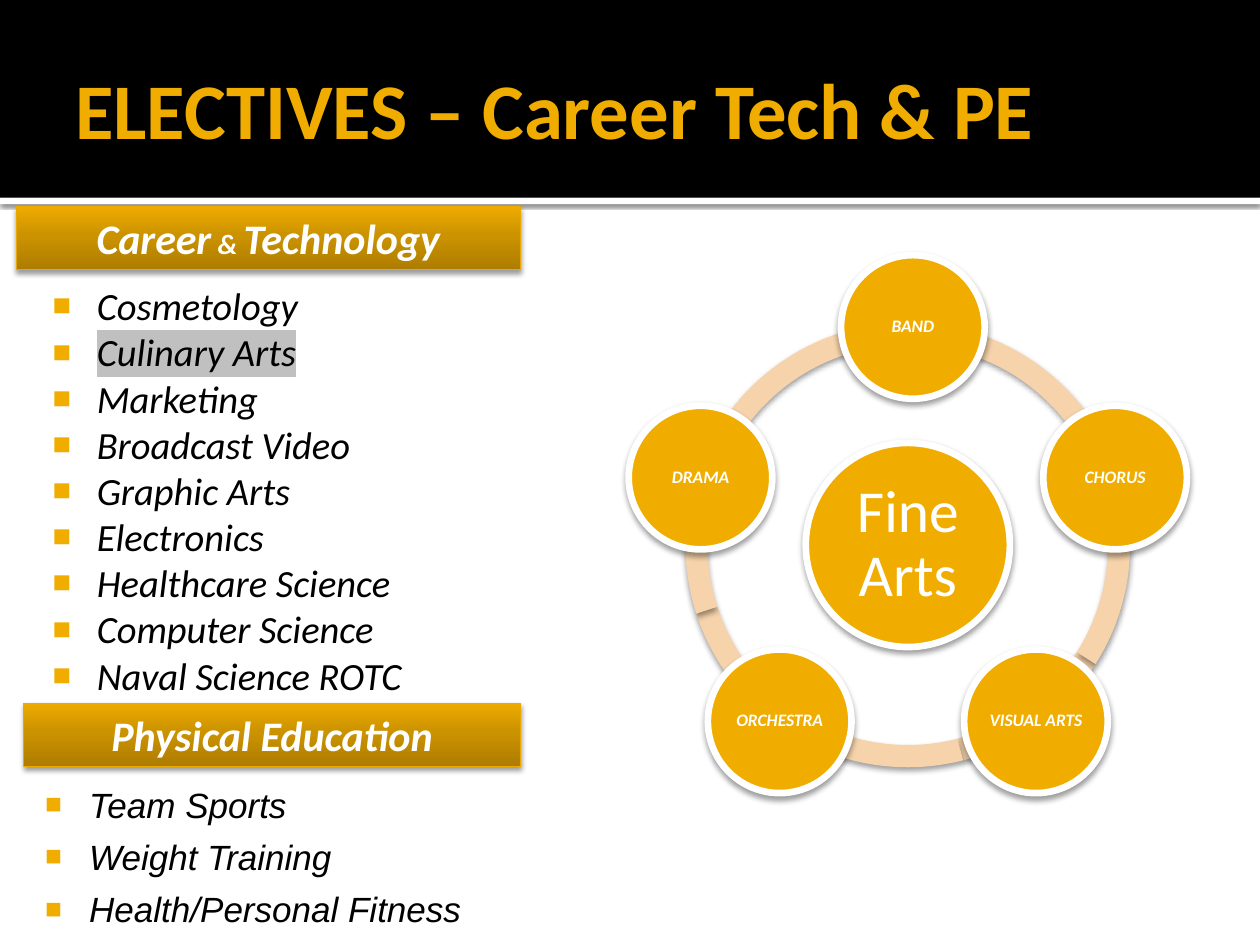
import math

from lxml import etree
from pptx import Presentation
from pptx.dml.color import RGBColor
from pptx.enum import shapes, text
from pptx.oxml import parse_xml
from pptx.oxml.ns import nsdecls, qn
from pptx.util import Inches, Pt

COLORS = {
    "black": "000000", "white": "FFFFFF", "gold": "F0AD00", "ring": "F6D3AB",
    "bar_line": "EBA900", "bar_dark": "AE7D00", "bar_mid": "CC9300",
    "bar_light": "EEAB00", "highlight": "C0C0C0",
}
SHAPE = shapes.MSO_SHAPE
CENTER = text.PP_ALIGN.CENTER
TOP, MIDDLE = text.MSO_ANCHOR.TOP, text.MSO_ANCHOR.MIDDLE


def rgb(name):
    return RGBColor.from_string(COLORS[name])


def add_shape(s, kind, box, fill, line=None, width=0, shadow=None):
    """shadow is (opacity %, blur pt, distance pt), cast straight down."""
    sp = s.shapes.add_shape(kind, *map(Inches, box))
    sp.shadow.inherit = False
    if fill:
        sp.fill.solid()
        sp.fill.fore_color.rgb = rgb(fill)
    if line:
        sp.line.color.rgb = rgb(line)
        sp.line.width = Pt(width)
    else:
        sp.line.fill.background()
    if shadow:
        alpha, blur, dist = shadow
        effects = sp._element.spPr.find(qn("a:effectLst"))
        effects.append(parse_xml(
            f'<a:outerShdw {nsdecls("a")} blurRad="{Pt(blur)}" dist="{Pt(dist)}" '
            f'dir="5400000" rotWithShape="0"><a:srgbClr val="{COLORS["black"]}">'
            f'<a:alpha val="{alpha * 1000}"/></a:srgbClr></a:outerShdw>'))
    return sp


def set_frame(tf, anchor, insets):
    tf.word_wrap = True
    tf.vertical_anchor = anchor
    (tf.margin_left, tf.margin_top,
     tf.margin_right, tf.margin_bottom) = map(Inches, insets)


def add_text_box(s, box, anchor, insets):
    tf = s.shapes.add_textbox(*map(Inches, box)).text_frame
    set_frame(tf, anchor, insets)
    return tf


def add_run(p, content, size, color, font="Calibri", bold=False, italic=False):
    r = p.add_run()
    r.text = content
    r.font.size, r.font.name = Pt(size), font
    r.font.bold, r.font.italic = bold, italic
    r.font.color.rgb = rgb(color)
    return r


def add_highlight(r):
    mark = parse_xml(f'<a:highlight {nsdecls("a")}>'
                     f'<a:srgbClr val="{COLORS["highlight"]}"/></a:highlight>')
    r.font._element.find(qn("a:solidFill")).addnext(mark)


def add_bullet(p):
    pPr = p._p.get_or_add_pPr()
    pPr.set("marL", str(Inches(0.48)))
    pPr.set("indent", str(Inches(-0.35)))
    color = etree.SubElement(pPr, qn("a:buClr"))
    etree.SubElement(color, qn("a:srgbClr"), val=COLORS["gold"])
    etree.SubElement(pPr, qn("a:buSzPct"), val="80000")
    etree.SubElement(pPr, qn("a:buFont"), typeface="Arial")
    etree.SubElement(pPr, qn("a:buChar"), char="■")


def header(s, x, y, w, h):
    # White rule under the black band
    add_shape(s, SHAPE.RECTANGLE, (x, y + h, w, 0.05), "white", shadow=(60, 2.5, 0.8))
    add_shape(s, SHAPE.RECTANGLE, (x, y, w, h), "black")
    tf = add_text_box(s, (x + 0.5, y + 0.17, w - 1, 1.37), MIDDLE,
                      (0.1, 0.05, 0.05, 0.05))
    add_run(tf.paragraphs[0], "ELECTIVES – Career Tech & PE", 45, "gold", bold=True)


def section_bar(s, box, runs):
    sp = add_shape(s, SHAPE.RECTANGLE, box, None, "bar_line", 0.5, (38, 3.1, 2))
    stops = "".join(
        f'<a:gs pos="{pos}000"><a:srgbClr val="{COLORS[name]}"/></a:gs>'
        for pos, name in ((0, "bar_dark"), (55, "bar_mid"), (100, "bar_light")))
    sp._element.spPr.find(qn("a:prstGeom")).addnext(parse_xml(
        f'<a:gradFill {nsdecls("a")}><a:gsLst>{stops}</a:gsLst>'
        '<a:lin ang="16200000" scaled="0"/></a:gradFill>'))
    set_frame(sp.text_frame, MIDDLE, (0.1, 0.05, 0.1, 0.05))
    p = sp.text_frame.paragraphs[0]
    p.alignment = CENTER
    for content, size in runs:
        add_run(p, content, size, "white", bold=True, italic=True)


def bullet_list(s, box, insets, items, size, font, spacing=1.0, before=0, marked=()):
    tf = add_text_box(s, box, TOP, insets)
    for i, item in enumerate(items):
        p = tf.add_paragraph() if i else tf.paragraphs[0]
        p.line_spacing, p.space_before = spacing, Pt(before)
        add_bullet(p)
        r = add_run(p, item, size, "black", font, italic=True)
        if item in marked:
            add_highlight(r)


def circle(s, cx, cy, size, label, label_size, font_size, inset, strong):
    def square(side):
        return cx - side / 2, cy - side / 2, side, side

    add_shape(s, SHAPE.OVAL, square(size), "gold", "white", 3.82, (38, 3.5, 2))
    tf = add_text_box(s, square(label_size), MIDDLE, (inset,) * 4)
    p = tf.paragraphs[0]
    p.alignment, p.line_spacing = CENTER, 0.9
    add_run(p, label, font_size, "white", bold=strong, italic=strong)


def fine_arts_wheel(s, x, y, size):
    cx, cy = x + size / 2, y + size / 2
    # Ring: four equal arcs, and one that closes the circle over the top
    cuts = [32.4 + 43.2 * i for i in range(5)]
    for start, end in zip(cuts, cuts[1:] + cuts[:1]):
        arc = add_shape(s, SHAPE.BLOCK_ARC, (x, y, size, size), "ring",
                        shadow=(38, 3.5, 2))
        # Angles are held in 60000ths of a degree, scaled by 100000
        for i, value in enumerate((start * 0.6, end * 0.6, 0.05)):
            arc.adjustments[i] = value
    # Hub and the five subjects, clockwise from the top
    circle(s, cx, cy, 1.62, "Fine Arts", 1.15, 34, 0.05, False)
    subjects = ["BAND", "CHORUS", "VISUAL ARTS", "ORCHESTRA", "DRAMA"]
    for i, subject in enumerate(subjects):
        angle = math.radians(72 * i - 90)
        shift = 0.04 if i == 0 else 0
        circle(s, cx + shift + 1.73 * math.cos(angle), cy + 1.73 * math.sin(angle),
               1.14, subject, 0.8, 10, 0.01, True)


def main():
    prs = Presentation()
    prs.slide_width, prs.slide_height = Inches(10), Inches(7.5)
    s = prs.slides.add_slide(prs.slide_layouts[6])

    header(s, 0, 0, 10, 1.57)
    fine_arts_wheel(s, 5.44, 2.56, 3.53)

    # Career and technology
    section_bar(s, (0.13, 1.64, 4, 0.5),
                [("Career", 24), (" & ", 16), ("Technology", 24)])
    bullet_list(s, (0.19, 2.14, 3.43, 3.84), (0.1, 0.1, 0.1, 0.05),
                ["Cosmetology", "Culinary Arts", "Marketing", "Broadcast Video",
                 "Graphic Arts", "Electronics", "Healthcare Science",
                 "Computer Science", "Naval Science ROTC"],
                22, "Calibri", marked=("Culinary Arts",))

    # Physical education
    section_bar(s, (0.19, 5.58, 3.94, 0.5), [("Physical Education", 24)])
    bullet_list(s, (0.13, 6.09, 4.67, 1.41), (0.1, 0.06, 0.05, 0.1),
                ["Team Sports", "Weight Training", "Health/Personal Fitness"],
                20, "Arial", spacing=1.2, before=1)

    prs.save("out.pptx")


if __name__ == "__main__":
    main()
